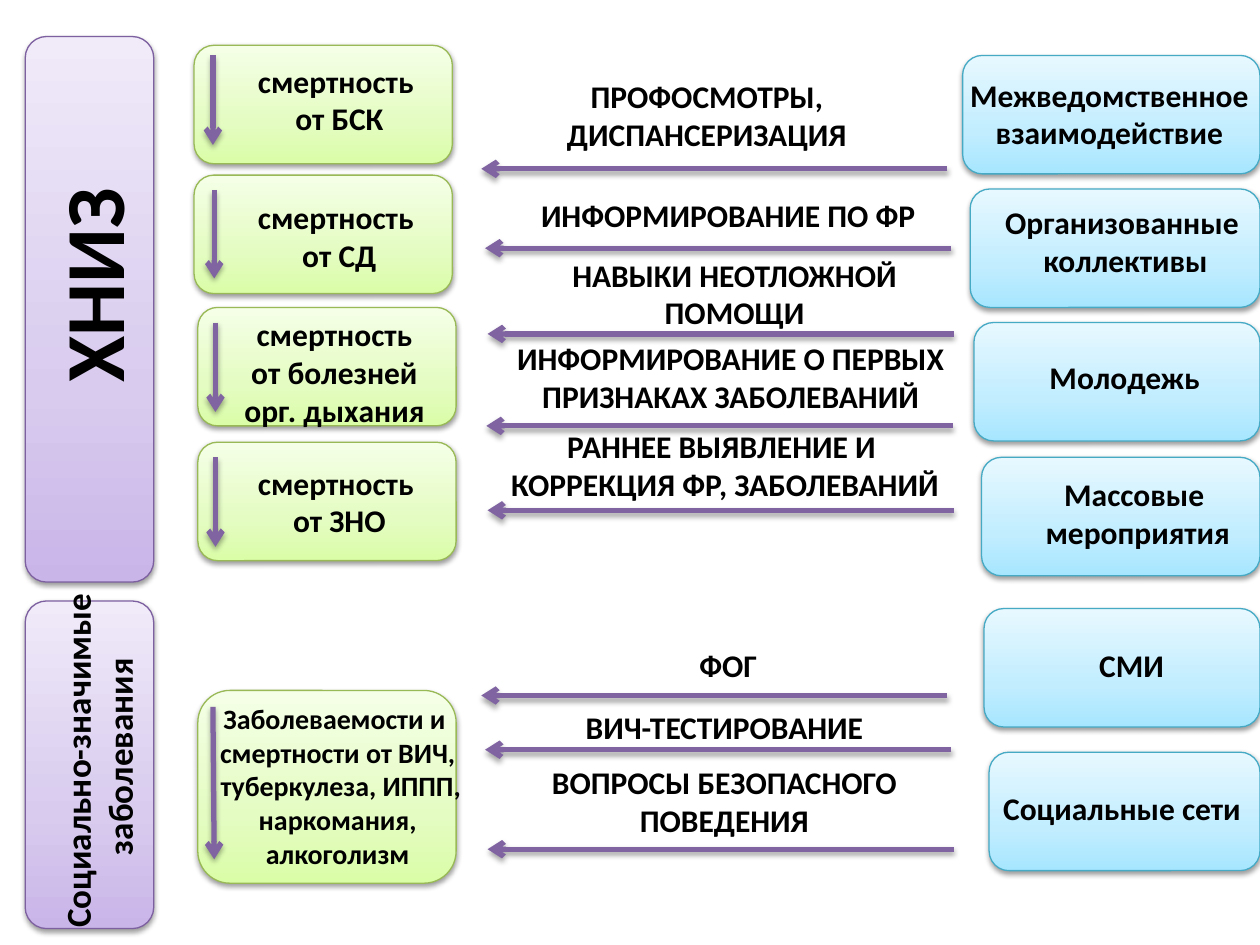
"""Build a slide linking health measures, partners and mortality goals."""
from lxml import etree
from pptx import Presentation
from pptx import util as u
from pptx.dml.color import RGBColor
from pptx.enum import shapes, text
from pptx.oxml import parse_xml
from pptx.oxml.ns import nsdecls, qn

HUES = {"ink": "000000", "arrow": "8064A2"}
FILLS = {
    "violet": ("C9B5E8", "D8CBEE", "F0EAF9", "7D60A0"),
    "green": ("DAFDA7", "E4FCC2", "F5FFE7", "98B955"),
    "blue": ("A7E6FF", "C1EDFF", "E7F8FF", "46AAC5"),
}
TALL = 0.94
EDGE = 10
SPAN = 3.7

# box, label place, label, size, label wraps
GOALS = [
    ((1.54, 0.36, 2.05, TALL), (1.94, 0.44, 1.45, 0.71), "смертность\n от БСК", 18, False),
    ((1.54, 1.39, 2.05, TALL), (1.94, 1.52, 1.45, 0.71), "смертность\n от СД", 18, False),
    ((1.57, 2.44, 2.05, TALL), (1.83, 2.45, 1.65, 1.01),
     "смертность\n от болезней \nорг. дыхания", 18, False),
    ((1.57, 3.51, 2.05, TALL), (1.94, 3.63, 1.45, 0.71), "смертность\n от ЗНО", 18, False),
    ((1.57, 5.48, 2.05, 1.53), (1.54, 5.52, 2.28, 1.45),
     "Заболеваемости и \nсмертности от ВИЧ,\n туберкулеза, ИППП, наркомания, алкоголизм", 16, True),
]
DROPS = [(1.69, 0.44, 1.69, 1.15), (1.7, 1.51, 1.7, 2.21), (1.71, 2.56, 1.71, 3.27),
         (1.71, 3.63, 1.71, 4.34), (1.69, 5.61, 1.7, 6.82)]
# arrow tip, label place, label
ACTS = [
    ((3.82, 1.34), (3.8, 0.56, 3.62, 0.71), "ПРОФОСМОТРЫ,\nДИСПАНСЕРИЗАЦИЯ"),
    ((3.85, 1.97), (3.85, 1.51, 3.86, 0.4), "ИНФОРМИРОВАНИЕ ПО ФР"),
    ((3.87, 2.65), (3.9, 1.98, 3.86, 0.71), "НАВЫКИ НЕОТЛОЖНОЙ ПОМОЩИ"),
    ((3.86, 3.38), (3.87, 2.64, 3.86, 0.71), "ИНФОРМИРОВАНИЕ О ПЕРВЫХ ПРИЗНАКАХ ЗАБОЛЕВАНИЙ"),
    ((3.87, 4.05), (3.71, 3.34, 4.09, 0.71), "РАННЕЕ ВЫЯВЛЕНИЕ И \nКОРРЕКЦИЯ ФР, ЗАБОЛЕВАНИЙ"),
    ((3.82, 5.52), (3.85, 5.08, 3.86, 0.4), "ФОГ"),
    ((3.85, 5.95), (3.82, 5.57, 3.86, 0.4), "ВИЧ-ТЕСТИРОВАНИЕ"),
    ((3.87, 6.74), (3.82, 6.01, 3.86, 0.71), "ВОПРОСЫ БЕЗОПАСНОГО ПОВЕДЕНИЯ"),
]
# box corner, label place, label
ALLIES = [
    ((7.64, 0.44), (7.59, 0.55, 2.43, 0.71), "Межведомственное\nвзаимодействие"),
    ((7.7, 1.5), (7.87, 1.56, 2.07, 0.71), "Организованные\n коллективы"),
    ((7.73, 2.56), (8.23, 2.79, 1.39, 0.4), "Молодежь"),
    ((7.79, 3.63), (8.19, 3.72, 1.68, 0.71), "Массовые \nмероприятия"),
    ((7.81, 4.83), (8.62, 5.08, 0.72, 0.4), "СМИ"),
    ((7.85, 5.97), (7.85, 6.21, 2.11, 0.4), "Социальные сети"),
]
# box, label place, label, size
THEMES = [
    ((0.2, 0.29, 1.02, 4.33), (-0.15, 1.81, 1.76, 0.91), "ХНИЗ", 48),
    ((0.2, 4.77, 1.02, 2.6), (-0.69, 5.62, 2.94, 0.77), "Социально-значимые \nзаболевания", 20),
]


def inch(place):
    return [u.Inches(n) for n in place]


def shade(item, dist, alpha):
    item._element.spPr.append(parse_xml(
        f'<a:effectLst {nsdecls("a")}><a:outerShdw blurRad="{u.Pt(3.1)}" dist="{u.Pt(dist)}" '
        f'dir="5400000" rotWithShape="0"><a:srgbClr val="{HUES["ink"]}">'
        f'<a:alpha val="{alpha}000"/></a:srgbClr></a:outerShdw></a:effectLst>'))


def box(slide, place, kind):
    item = slide.shapes.add_shape(shapes.MSO_SHAPE.ROUNDED_RECTANGLE, *inch(place))
    *tones, edge = FILLS[kind]
    stops = "".join(f'<a:gs pos="{pos}000"><a:srgbClr val="{tone}"/></a:gs>'
                    for pos, tone in zip((0, 35, 100), tones))
    item._element.spPr.append(parse_xml(
        f'<a:gradFill {nsdecls("a")} rotWithShape="1"><a:gsLst>{stops}</a:gsLst>'
        '<a:lin ang="16200000" scaled="0"/></a:gradFill>'))
    item.line.color.rgb = RGBColor.from_string(edge)
    item.line.width = u.Pt(0.75)
    shade(item, 1.6, 38)


def label(slide, place, words, size=18, wrap=False, turn=0):
    item = slide.shapes.add_textbox(*inch(place))
    item.rotation = turn
    frame = item.text_frame
    frame.text = words
    frame.word_wrap = wrap
    frame.auto_size = text.MSO_AUTO_SIZE.SHAPE_TO_FIT_TEXT
    for para in frame.paragraphs:
        para.alignment = text.PP_ALIGN.CENTER
        font = para.font
        font.name, font.size, font.bold = "Calibri", u.Pt(size), True
        font.color.rgb = RGBColor.from_string(HUES["ink"])


def arrow(slide, ends):
    item = slide.shapes.add_connector(shapes.MSO_CONNECTOR.STRAIGHT, *inch(ends))
    item.line.color.rgb = RGBColor.from_string(HUES["arrow"])
    item.line.width = u.Pt(3)
    etree.SubElement(item.line._get_or_add_ln(), qn("a:tailEnd"), type="arrow")
    shade(item, 1.8, 35)


def main():
    deck = Presentation()
    deck.slide_width, deck.slide_height = u.Inches(EDGE), u.Inches(7.5)
    slide = deck.slides.add_slide(deck.slide_layouts[6])
    for place, spot, words, size in THEMES:
        box(slide, place, "violet")
        label(slide, spot, words, size, turn=270)
    for place, spot, words, size, wrap in GOALS:
        box(slide, place, "green")
        label(slide, spot, words, size, wrap)
    for ends in DROPS:
        arrow(slide, ends)
    for (x, y), spot, words in ACTS:
        arrow(slide, (x + SPAN, y, x, y))
        label(slide, spot, words, wrap=True)
    for (x, y), spot, words in ALLIES:
        box(slide, (x, y, EDGE - x, TALL), "blue")
        label(slide, spot, words)
    deck.save("out.pptx")


if __name__ == "__main__":
    main()
